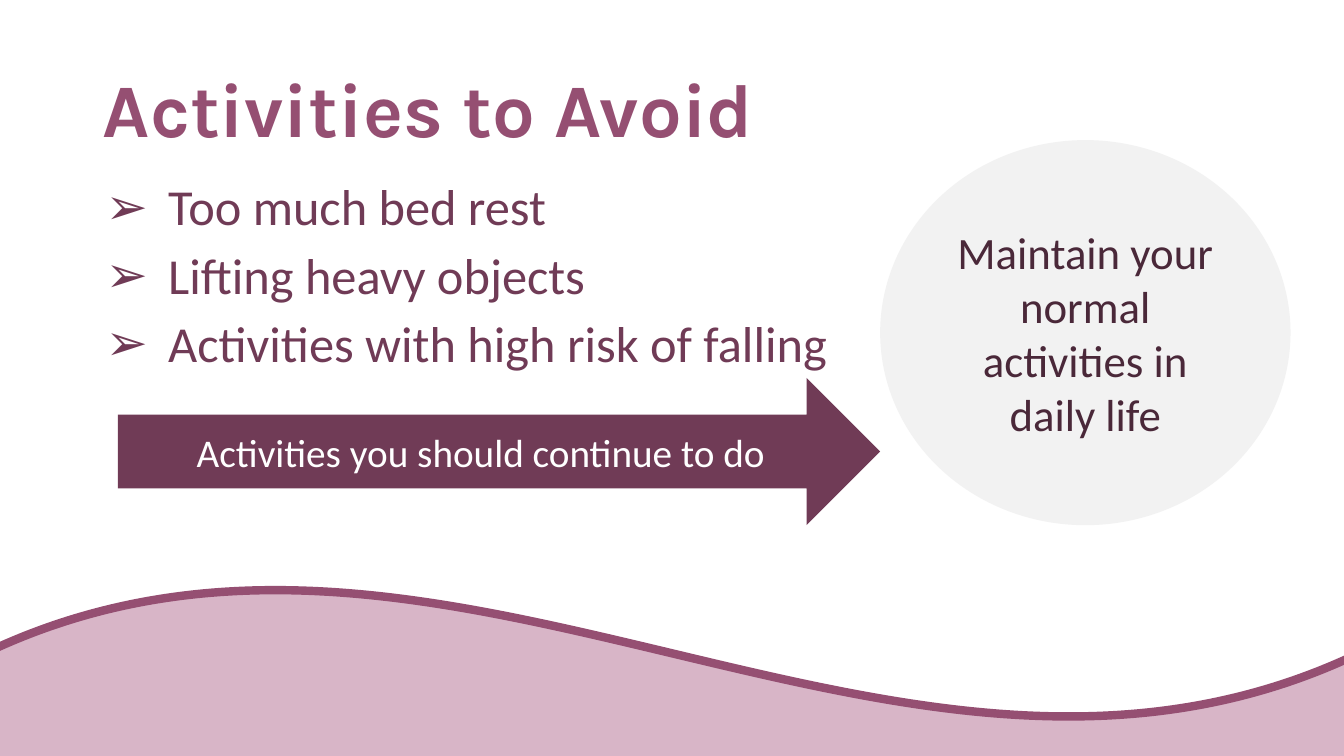
"""Builds the slide on activities to avoid."""
from lxml.etree import SubElement
from pptx import Presentation
from pptx.dml.color import RGBColor
from pptx.enum.shapes import MSO_SHAPE
from pptx.enum.text import MSO_ANCHOR, MSO_AUTO_SIZE, PP_ALIGN
from pptx.oxml.ns import qn
from pptx.util import Inches, Pt

PLUM = "703B56"
MAUVE = "954F72"


def color(hex_string):
    """Return the colour for a hex string."""
    return RGBColor.from_string(hex_string)


def write_text(frame, *lines, size, fill, font="Calibri", bold=False,
               align=PP_ALIGN.LEFT, anchor=MSO_ANCHOR.TOP,
               line_spacing=1.0, gap=0, bullet=None):
    """Fill a text frame with one formatted paragraph per line."""
    frame.word_wrap = True
    frame.auto_size = MSO_AUTO_SIZE.NONE
    frame.vertical_anchor = anchor
    for index, line in enumerate(lines):
        paragraph = frame.add_paragraph() if index else frame.paragraphs[0]
        paragraph.alignment = align
        paragraph.line_spacing = line_spacing
        paragraph.space_before = Pt(gap if index else 0)
        if bullet:
            properties = paragraph._p.get_or_add_pPr()
            properties.set("marL", str(Inches(0.75)))
            properties.set("indent", str(Inches(-0.62)))
            SubElement(properties, qn("a:buFont"), typeface="Wingdings 3" if bullet == "}" else "Arial")
            SubElement(properties, qn("a:buChar"), char=bullet)
        run = paragraph.add_run()
        run.text = line
        run.font.name = font
        run.font.size = Pt(size)
        run.font.bold = bold
        run.font.color.rgb = color(fill)


class SlideBuilder:
    """Holds the current slide and adds elements in its style."""

    def __init__(self, presentation):
        """Add a title-only slide."""
        self.slide = presentation.slides.add_slide(presentation.slide_layouts[5])
        background = self.slide.background.fill
        background.solid()
        background.fore_color.rgb = color("FFFFFF")

    def add_title(self, text, left, top, width, height):
        """Place and format the title."""
        title = self.slide.shapes.title
        title.left, title.top = Inches(left), Inches(top)
        title.width, title.height = Inches(width), Inches(height)
        write_text(title.text_frame, text, size=54, fill=MAUVE, font="Karla",
                   bold=True, anchor=MSO_ANCHOR.MIDDLE, line_spacing=0.9)

    def add_bullets(self, lines, left, top, width, height):
        """Add a bulleted list."""
        box = self.slide.shapes.add_textbox(
            Inches(left), Inches(top), Inches(width), Inches(height))
        write_text(box.text_frame, *lines, size=36, fill=PLUM,
                   line_spacing=0.9, gap=10, bullet="➢")

    def add_shape(self, kind, left, top, width, height, fill, line=None):
        """Add a flat preset shape, outlined if a line colour is given."""
        shape = self.slide.shapes.add_shape(
            kind, Inches(left), Inches(top), Inches(width), Inches(height))
        shape.shadow.inherit = False
        shape.fill.solid()
        shape.fill.fore_color.rgb = color(fill)
        if line:
            shape.line.color.rgb = color(line)
            shape.line.width = Pt(6)
        else:
            shape.line.fill.background()
        return shape

    def add_label(self, text, kind, left, top, width, height, fill, size, ink):
        """Add a shape with centred text."""
        shape = self.add_shape(kind, left, top, width, height, fill)
        write_text(shape.text_frame, text, size=size, fill=ink,
                   align=PP_ALIGN.CENTER, anchor=MSO_ANCHOR.MIDDLE)


def main():
    """Build and save the presentation."""
    presentation = Presentation()
    presentation.slide_width = Inches(13.33)
    presentation.slide_height = Inches(7.5)
    builder = SlideBuilder(presentation)
    builder.add_shape(MSO_SHAPE.WAVE, -0.15, 5.83, 13.63, 5.21, "D8B5C7", MAUVE)
    builder.add_title("Activities to Avoid", 0.92, 0.4, 11.5, 1.45)
    builder.add_bullets(
        ["Too much bed rest", "Lifting heavy objects",
         "Activities with high risk of falling"], 0.82, 1.76, 7.8, 3.98)
    builder.add_label("Maintain your normal activities in daily life",
                      MSO_SHAPE.OVAL, 8.73, 1.39, 4.07, 3.82,
                      "F2F2F2", 32, "4A2839")
    builder.add_label("Activities you should continue to do",
                      MSO_SHAPE.RIGHT_ARROW, 1.17, 3.75, 7.56, 1.46,
                      PLUM, 28, "FFFFFF")
    presentation.save("out.pptx")


if __name__ == "__main__":
    main()
